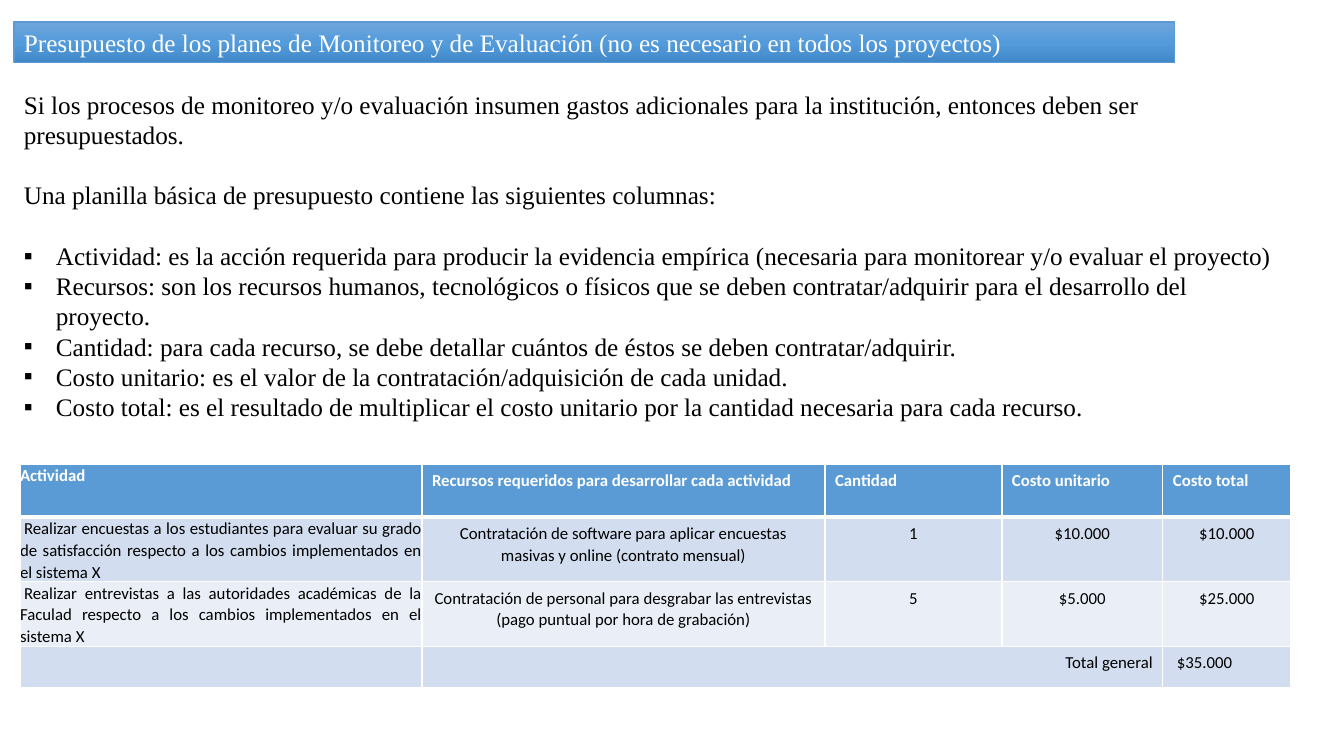
from copy import deepcopy

from lxml import etree
from pptx import Presentation
from pptx.dml.color import RGBColor
from pptx.enum.shapes import MSO_SHAPE
from pptx.enum.text import PP_ALIGN
from pptx.oxml.ns import qn
from pptx.util import Emu, Pt

# Content
HEADING = ("Presupuesto de los planes de Monitoreo y de Evaluación "
           "(no es necesario en todos los proyectos)")
INTRO = [
    "Si los procesos de monitoreo y/o evaluación insumen gastos adicionales "
    "para la institución, entonces deben ser presupuestados.",
    "Una planilla básica de presupuesto contiene las siguientes columnas:",
]
COLUMN_NOTES = [
    "Actividad: es la acción requerida para producir la evidencia empírica "
    "(necesaria para monitorear y/o evaluar el proyecto)",
    "Recursos: son los recursos humanos, tecnológicos o físicos que se deben "
    "contratar/adquirir para el desarrollo del proyecto.",
    "Cantidad: para cada recurso, se debe detallar cuántos de éstos se deben "
    "contratar/adquirir.",
    "Costo unitario: es el valor de la contratación/adquisición de cada unidad.",
    "Costo total: es el resultado de multiplicar el costo unitario por la "
    "cantidad necesaria para cada recurso.",
]
BUDGET = [
    ("Actividad", "Recursos requeridos para desarrollar cada actividad",
     "Cantidad", "Costo unitario", "Costo total"),
    ("Realizar encuestas a los estudiantes para evaluar su grado de "
     "satisfacción respecto a los cambios implementados en el sistema X",
     "Contratación de software para aplicar encuestas masivas y online "
     "(contrato mensual)", "1", "$10.000", "$10.000"),
    ("Realizar entrevistas a las autoridades académicas de la Faculad "
     "respecto a los cambios implementados en el sistema X",
     "Contratación de personal para desgrabar las entrevistas (pago puntual "
     "por hora de grabación)", "5", "$5.000", "$25.000"),
    ("", "Total general", "", "", "$35.000"),
]

# Lengths in px
SLIDE = (1344, 756)
HEADING_BOX = (14, 22, 1161, 41)
BODY_BOX = (14, 84, 1282, 346)
TABLE_AT = (20, 464)
COLUMN_WIDTHS = (402, 403, 177, 161, 128)
ROW_HEIGHTS = (53, 64, 64, 41)
BULLET_INDENT = 32
CELL_INDENT = 4

# Style
WHITE = RGBColor(0xFF, 0xFF, 0xFF)
BLACK = RGBColor(0, 0, 0)
BLUE = RGBColor(0x5B, 0x9B, 0xD5)
BAND_DARK = RGBColor(0xD2, 0xDE, 0xEF)
BAND_LIGHT = RGBColor(0xEA, 0xEF, 0xF7)
HEADING_GRADIENT = [
    (0, RGBColor(0x70, 0xA5, 0xDA)),
    (0.5, RGBColor(0x53, 0x9B, 0xDB)),
    (1, RGBColor(0x42, 0x88, 0xC8)),
]
ROW_FILLS = (BLUE, BAND_DARK, BAND_LIGHT, BAND_DARK)
SERIF, SANS = "Times New Roman", "Calibri"
RECTANGLE = MSO_SHAPE.RECTANGLE
LEFT, CENTER, RIGHT, JUSTIFY = (
    PP_ALIGN.LEFT, PP_ALIGN.CENTER, PP_ALIGN.RIGHT, PP_ALIGN.JUSTIFY)
EMU_PER_PX = 914400 / 100.8


def px(length):
    return Emu(round(length * EMU_PER_PX))


def box(lengths):
    return [px(length) for length in lengths]


def set_font(paragraph, name, size, color, bold=False):
    font = paragraph.font
    font.name, font.size, font.bold = name, Pt(size), bold
    font.color.rgb = color


def add_bullet(paragraph):
    properties = paragraph._p.get_or_add_pPr()
    properties.set("marL", str(px(BULLET_INDENT)))
    properties.set("indent", str(-px(BULLET_INDENT)))
    color = etree.Element(qn("a:buClr"))
    etree.SubElement(color, qn("a:srgbClr"), val=str(BLACK))
    typeface = etree.Element(qn("a:buFont"), typeface="Wingdings")
    typeface.set("typeface", "Arial")
    mark = etree.Element(qn("a:buChar"), char="▪")
    for position, element in enumerate((color, typeface, mark)):
        properties.insert(position, element)


def set_borders(cell, row):
    properties = cell._tc.get_or_add_tcPr()
    widths = {"lnL": 1, "lnR": 1,
              "lnT": 3 if row == 1 else 1, "lnB": 3 if row == 0 else 1}
    for position, (side, width) in enumerate(widths.items()):
        line = etree.Element(qn("a:" + side), w=str(Pt(width)))
        fill = etree.SubElement(line, qn("a:solidFill"))
        etree.SubElement(fill, qn("a:srgbClr"), val=str(WHITE))
        properties.insert(position, line)


def cell_alignment(row, column):
    if row == 0:
        return LEFT
    if row == len(BUDGET) - 1:
        return RIGHT if column == 1 else LEFT
    return JUSTIFY if column == 0 else CENTER


def add_heading(slide):
    banner = slide.shapes.add_shape(RECTANGLE, *box(HEADING_BOX))
    banner.shadow.inherit = False
    banner.line.color.rgb = BLUE
    banner.line.width = Pt(0.75)
    banner.fill.gradient()
    banner.fill.gradient_angle = 270
    first_stop = banner._element.spPr.find(".//" + qn("a:gs"))
    first_stop.addnext(deepcopy(first_stop))
    for stop, (position, color) in zip(banner.fill.gradient_stops, HEADING_GRADIENT):
        stop.position, stop.color.rgb = position, color
    banner.text_frame.word_wrap = True
    paragraph = banner.text_frame.paragraphs[0]
    paragraph.text = HEADING
    paragraph.alignment = LEFT
    set_font(paragraph, SERIF, 18, WHITE)


def add_body(slide):
    frame = slide.shapes.add_textbox(*box(BODY_BOX)).text_frame
    frame.word_wrap = True
    for index, text in enumerate(INTRO + COLUMN_NOTES):
        paragraph = frame.add_paragraph() if index else frame.paragraphs[0]
        paragraph.text = text
        set_font(paragraph, SERIF, 18, BLACK)
        if index < len(INTRO):
            paragraph.space_after = Pt(21.6)
        else:
            add_bullet(paragraph)


def add_budget(slide):
    size = (sum(COLUMN_WIDTHS), sum(ROW_HEIGHTS))
    table = slide.shapes.add_table(
        len(BUDGET), len(COLUMN_WIDTHS), *box(TABLE_AT + size)).table
    table.first_row = table.horz_banding = False
    for column, width in zip(table.columns, COLUMN_WIDTHS):
        column.width = px(width)
    for row, height in zip(table.rows, ROW_HEIGHTS):
        row.height = px(height)

    last = len(BUDGET) - 1
    table.cell(last, 1).merge(table.cell(last, 3))
    for r, texts in enumerate(BUDGET):
        for c, text in enumerate(texts):
            cell = table.cell(r, c)
            cell.fill.solid()
            cell.fill.fore_color.rgb = ROW_FILLS[r]
            set_borders(cell, r)
            if not text:
                continue
            if c == 0:
                cell.margin_left = cell.margin_right = 0
                cell.margin_top = cell.margin_bottom = 0
            paragraph = cell.text_frame.paragraphs[0]
            paragraph.text = text
            paragraph.alignment = cell_alignment(r, c)
            paragraph.line_spacing = 1.07
            paragraph.space_after = Pt(8)
            set_font(paragraph, SANS, 12, BLACK if r else WHITE, bold=r == 0)
            if (c == 0 and r > 0) or (r == last and c == 4):
                paragraph._p.get_or_add_pPr().set("indent", str(px(CELL_INDENT)))


def main():
    presentation = Presentation()
    presentation.slide_width, presentation.slide_height = box(SLIDE)
    slide = presentation.slides.add_slide(presentation.slide_layouts[6])
    add_heading(slide)
    add_body(slide)
    add_budget(slide)
    presentation.save("out.pptx")


if __name__ == "__main__":
    main()
